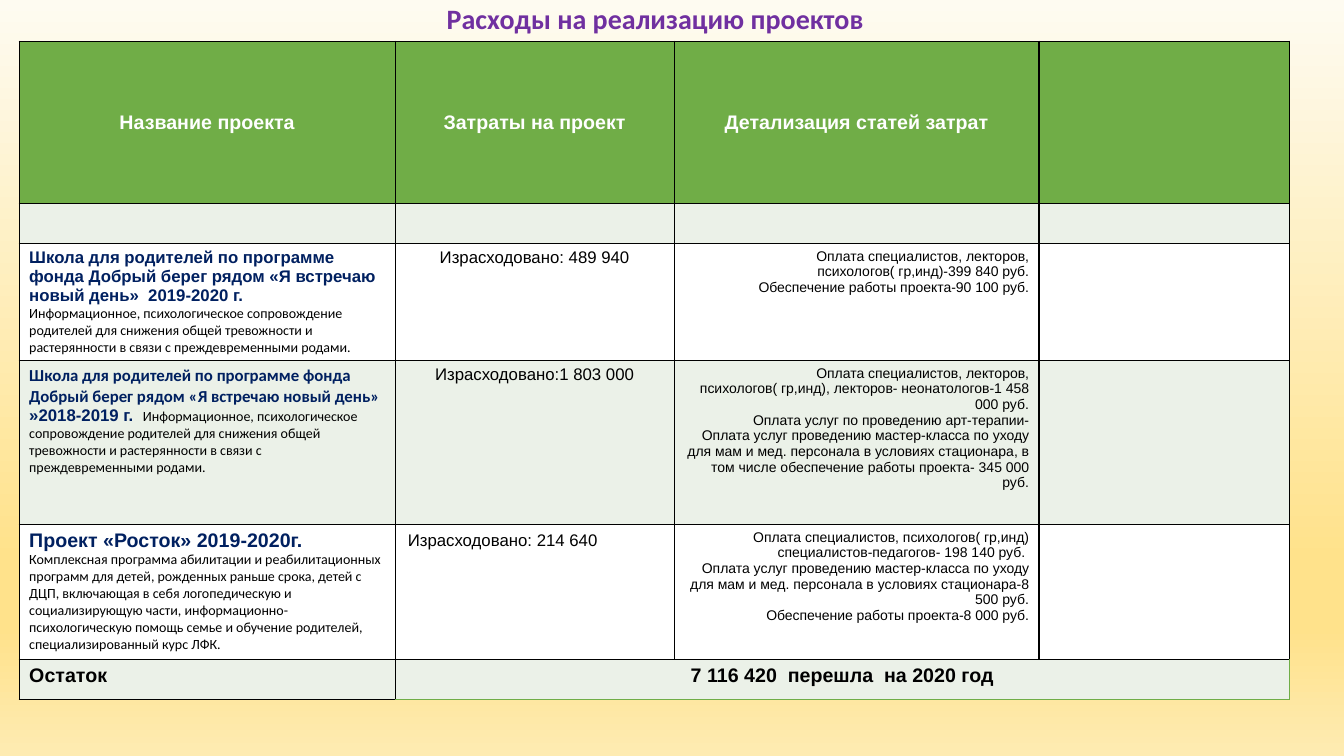
"""Build a slide with a table of project costs."""
from copy import deepcopy
from lxml import etree
from pptx import Presentation, util as u
from pptx.dml.color import RGBColor
from pptx.enum import text
from pptx.oxml import ns

TITLE = "Расходы на реализацию проектов"
BACK = [(0, "FEFBF1"), (74, "FFE28B"), (83, "FFE28B"), (100, "FEEBB2")]
GREEN, PALE, WHITE = "70AD47", "EBF1E8", "FFFFFF"
FILLS = [GREEN, PALE, WHITE, PALE, WHITE, PALE]
COLS = [268.6, 199.3, 260.6, 179]
ROWS = [115.7, 27.8, 83.6, 117.1, 95.7, 28.6]
LEFT, TOP = 13.7, 29.5

LOOKS = {
    "title": dict(name="Calibri", size=20, color="7030A0", bold=True),
    "head": dict(name="Arial", size=14, color=WHITE, bold=True),
    "name": dict(name="Arial", size=12, color="002060", bold=True),
    "soft": dict(name="Calibri", size=12, color="002060", bold=True),
    "big": dict(name="Arial", size=14, color="002060", bold=True),
    "note": dict(name="Calibri", size=10, color="000000", bold=False),
    "cost": dict(name="Arial", size=12, color="000000", bold=False),
    "item": dict(name="Arial", size=10, color="000000", bold=False),
    "sum": dict(name="Arial", size=14, color="000000", bold=True),
}
SIDES = {"l": text.PP_ALIGN.LEFT, "c": text.PP_ALIGN.CENTER, "r": text.PP_ALIGN.RIGHT}

HEADS = ["Название проекта", "Затраты на проект", "Детализация статей затрат"]
SCHOOL = "Школа для родителей по программе фонда Добрый берег рядом «Я встречаю новый день» "
ABOUT = ("Информационное, психологическое сопровождение родителей для снижения общей "
         "тревожности и растерянности в связи с преждевременными родами.")
CLASS = "Оплата услуг проведению мастер-класса по уходу для мам и мед. персонала в условиях "
JOBS = [
    ([[("name", SCHOOL + " 2019-2020 г.")], [("note", ABOUT)]],
     "c", "Израсходовано: 489 940",
     ["Оплата специалистов, лекторов, психологов( гр,инд)-399 840 руб.",
      "Обеспечение работы проекта-90 100 руб."]),
    ([[("soft", SCHOOL), ("name", "»2018-2019 г.  "), ("note", ABOUT)]],
     "c", "Израсходовано:1 803 000",
     ["Оплата специалистов, лекторов, психологов( гр,инд), лекторов- неонатологов-1 458 000 руб.",
      "Оплата услуг по проведению арт-терапии-",
      CLASS + "стационара, в том числе обеспечение работы проекта- 345 000 руб."]),
    ([[("big", "Проект «Росток» 2019-2020г.")],
      [("note", "Комплексная программа абилитации и реабилитационных программ для детей, "
                "рожденных раньше срока, детей с ДЦП, включающая в себя логопедическую и "
                "социализирующую части, информационно-психологическую помощь семье и "
                "обучение родителей, специализированный курс ЛФК.")]],
     "l", "Израсходовано: 214 640",
     ["Оплата специалистов, психологов( гр,инд) специалистов-педагогов- 198 140 руб. ",
      CLASS + "стационара-8 500 руб.",
      "Обеспечение работы проекта-8 000 руб."]),
]
REST = ["Остаток", "7 116 420  перешла  на 2020 год"]


def tint(code):
    return RGBColor.from_string(code)


def style(font, look):
    for key, val in LOOKS[look].items():
        if key == "color":
            font.color.rgb = tint(val)
        else:
            setattr(font, key, u.Pt(val) if key == "size" else val)


def write(frame, paras, side="l"):
    for i, runs in enumerate(paras):
        para = frame.add_paragraph() if i else frame.paragraphs[0]
        para.alignment = SIDES[side]
        for look, words in runs:
            run = para.add_run()
            run.text = words
            style(run.font, look)


def edge(cell, codes):
    props = cell._tc.get_or_add_tcPr()
    for i, (side, code) in enumerate(zip("LRTB", codes)):
        line = etree.Element(ns.qn("a:ln" + side), w=str(u.Pt(1)))
        fill = etree.SubElement(line, ns.qn("a:solidFill"))
        etree.SubElement(fill, ns.qn("a:srgbClr"), val=code)
        props.insert(i, line)


def paint(slide):
    fill = slide.background.fill
    fill.gradient()
    fill.gradient_angle = 270
    stops = slide._element.xpath(".//a:gsLst")[0]
    for _ in BACK[2:]:
        stops.append(deepcopy(stops[-1]))
    for stop, (pos, code) in zip(fill.gradient_stops, BACK):
        stop.position = pos / 100
        stop.color.rgb = tint(code)


def main():
    deck = Presentation()
    deck.slide_width, deck.slide_height = u.Pt(960), u.Pt(540)
    slide = deck.slides.add_slide(deck.slide_layouts[6])
    paint(slide)

    frame = slide.shapes.add_textbox(u.Pt(41.8), 0, u.Pt(852.5), u.Pt(TOP)).text_frame
    frame.word_wrap = True
    frame.vertical_anchor = text.MSO_ANCHOR.MIDDLE
    write(frame, [[("title", TITLE)]], "c")
    frame.paragraphs[0].line_spacing = 0.9

    area = map(u.Pt, (LEFT, TOP, sum(COLS), sum(ROWS)))
    table = slide.shapes.add_table(len(ROWS), len(COLS), *area).table
    for col, wide in zip(table.columns, COLS):
        col.width = u.Pt(wide)
    last = len(ROWS) - 1
    for r, (row, high) in enumerate(zip(table.rows, ROWS)):
        row.height = u.Pt(high)
        for c, cell in enumerate(row.cells):
            cell.fill.solid()
            cell.fill.fore_color.rgb = tint(FILLS[r])
            rim = GREEN if r == last and c else "000000"
            edge(cell, ["000000", rim, "000000", rim])

    for c, words in enumerate(HEADS):
        cell = table.cell(0, c)
        cell.vertical_anchor = text.MSO_ANCHOR.MIDDLE
        write(cell.text_frame, [[("head", words)]], "c")
    for r, (name, side, cost, items) in enumerate(JOBS, 2):
        cells = [table.cell(r, c).text_frame for c in range(3)]
        write(cells[0], name)
        write(cells[1], [[("cost", cost)]], side)
        write(cells[2], [[("item", item)] for item in items], "r")
    table.cell(2, 0).margin_bottom = 0
    cell = table.cell(4, 1)
    cell.margin_left, cell.margin_top = u.Pt(9), u.Pt(5)
    table.cell(last, 1).merge(table.cell(last, 3))
    for c, words in enumerate(REST):
        write(table.cell(last, c).text_frame, [[("sum", words)]], "lc"[c])
    deck.save("out.pptx")


if __name__ == "__main__":
    main()
